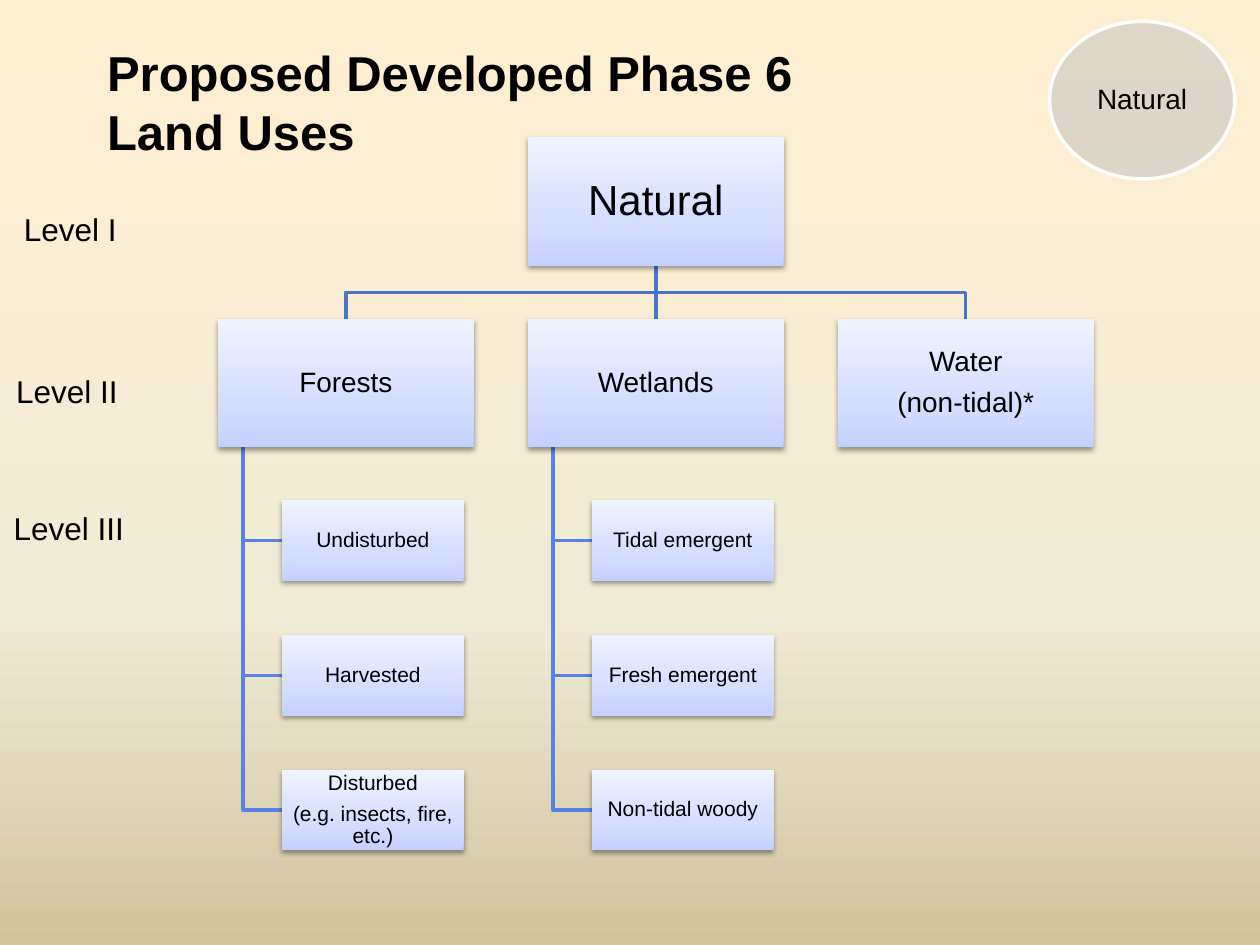
from lxml import etree
from pptx import Presentation
from pptx.dml.color import RGBColor
from pptx.enum.shapes import MSO_CONNECTOR as CONN, MSO_SHAPE as SHAPE
from pptx.enum.text import MSO_ANCHOR as ANCHOR, MSO_AUTO_SIZE as AUTO, PP_ALIGN as ALIGN
from pptx.oxml import parse_xml
from pptx.oxml.ns import nsdecls, qn
from pptx.util import Inches, Pt

BLACK = RGBColor(0x00, 0x00, 0x00)
WHITE = RGBColor(0xFF, 0xFF, 0xFF)
GREY = RGBColor(0xBF, 0xBF, 0xBF)
TRUNK_BLUE = RGBColor(0x4E, 0x73, 0xCB)
BRANCH_BLUE = RGBColor(0x58, 0x82, 0xE6)
SAND = [(0, RGBColor(0xFF, 0xEF, 0xD1)), (65, RGBColor(0xF0, 0xEB, 0xD5)),
        (100, RGBColor(0xD1, 0xC3, 0x9F))]
LAVENDER = [(0, RGBColor(0xC4, 0xD0, 0xFF)), (35, RGBColor(0xD6, 0xDE, 0xFF)),
            (100, RGBColor(0xEF, 0xF2, 0xFF))]

CARD_W, CARD_H = 2.03, 1.02
LEAF_W, LEAF_H = 1.44, 0.64
COLUMN_STEP, LEVEL_STEP, LEAF_STEP = 2.46, 1.44, 1.07
TRUNK_INDENT, LEAF_INDENT = 0.2, 0.51

BRANCHES = [
    ("Forests", ["Undisturbed", "Harvested", "Disturbed\n(e.g. insects, fire, etc.)"]),
    ("Wetlands", ["Tidal emergent", "Fresh emergent", "Non-tidal woody"]),
    ("Water\n(non-tidal)*", []),
]
LEVELS = [("Level I", 0.09, 1.62), ("Level II", 0.03, 2.9), ("Level III", 0.01, 3.99)]


def set_gradient(fill, stops, angle):
    """Fill with any number of (percent, colour) stops; angle is counter-clockwise."""
    fill.gradient()
    fill.gradient_angle = angle
    stop_list = fill.gradient_stops[0]._gs.getparent()
    for stop in list(stop_list):
        stop_list.remove(stop)
    for percent, colour in stops:
        stop_list.append(parse_xml(
            f'<a:gs {nsdecls("a")} pos="{percent * 1000}">'
            f'<a:srgbClr val="{colour}"/></a:gs>'))


def add_soft_shadow(sp):
    sp.shadow.inherit = False
    effects = sp._element.spPr.find(qn("a:effectLst"))
    effects.append(parse_xml(
        f'<a:outerShdw {nsdecls("a")} blurRad="39370" dist="20320" dir="5400000" rotWithShape="0">'
        '<a:srgbClr val="000000"><a:alpha val="38000"/></a:srgbClr></a:outerShdw>'))


def write(tf, text, size, bold=False, frame=None, para=None):
    tf.text = text
    tf.word_wrap = True
    for name, value in (frame or {}).items():
        setattr(tf, name, value)
    for p in tf.paragraphs:
        for name, value in (para or {}).items():
            setattr(p, name, value)
        for r in p.runs:
            for name, value in {"name": "Arial", "size": Pt(size), "bold": bold}.items():
                setattr(r.font, name, value)
            r.font.color.rgb = BLACK


def write_centred(sp, text, size):
    margins = ("margin_left", "margin_top", "margin_right", "margin_bottom")
    frame = {m: Inches(0.01) for m in margins} | {"vertical_anchor": ANCHOR.MIDDLE}
    write(sp.text_frame, text, size, frame=frame,
          para={"alignment": ALIGN.CENTER, "line_spacing": 0.9, "space_after": Pt(size * 0.4)})


def add_card(slide, text, size, x, y, w, h):
    sp = slide.shapes.add_shape(SHAPE.RECTANGLE, Inches(x), Inches(y), Inches(w), Inches(h))
    set_gradient(sp.fill, LAVENDER, 90)
    sp.line.fill.background()
    add_soft_shadow(sp)
    write_centred(sp, text, size)


def add_elbow(slide, points, colour):
    start, *rest = [(Inches(x), Inches(y)) for x, y in points]
    builder = slide.shapes.build_freeform(*start)
    builder.add_line_segments(rest, close=False)
    sp = builder.convert_to_shape()
    sp.fill.background()
    sp.line.color.rgb = colour
    sp.line.width = Pt(2)
    sp.shadow.inherit = False


def add_stem(slide, x, top, bottom):
    line = slide.shapes.add_connector(CONN.STRAIGHT, Inches(x), Inches(top),
                                      Inches(x), Inches(bottom))
    line.line.color.rgb = TRUNK_BLUE
    line.line.width = Pt(2)
    etree.SubElement(line._element.spPr, qn("a:effectLst"))


def add_branch(slide, text, leaves, x, y):
    first_leaf = y + LEVEL_STEP
    trunk, leaf_x = x + TRUNK_INDENT, x + LEAF_INDENT
    tops = [first_leaf + i * LEAF_STEP for i in range(len(leaves))]
    for top in tops:
        middle = top + LEAF_H / 2
        add_elbow(slide, [(trunk, y + CARD_H), (trunk, middle), (leaf_x, middle)], BRANCH_BLUE)
    add_card(slide, text, 16, x, y, CARD_W, CARD_H)
    for leaf, top in zip(leaves, tops):
        add_card(slide, leaf, 12, leaf_x, top, LEAF_W, LEAF_H)


def add_hierarchy(slide, x, y):
    root_x = x + COLUMN_STEP
    centre = root_x + CARD_W / 2
    root_bottom, child_top = y + CARD_H, y + LEVEL_STEP
    bend = (root_bottom + child_top) / 2
    for end in (centre - COLUMN_STEP, centre + COLUMN_STEP):
        add_elbow(slide, [(centre, root_bottom), (centre, bend), (end, bend), (end, child_top)],
                  TRUNK_BLUE)
    add_stem(slide, centre, root_bottom, child_top)
    add_card(slide, "Natural", 24, root_x, y, CARD_W, CARD_H)
    for i, (text, leaves) in enumerate(BRANCHES):
        add_branch(slide, text, leaves, x + i * COLUMN_STEP, child_top)


def add_title(slide, x, y, w, h):
    title = slide.shapes.title
    title.left, title.top, title.width, title.height = map(Inches, (x, y, w, h))
    write(title.text_frame, "Proposed Developed Phase 6 Land Uses", 28, bold=True,
          frame={"vertical_anchor": ANCHOR.TOP, "auto_size": AUTO.NONE},
          para={"alignment": ALIGN.LEFT})


def add_level_labels(slide, w, h):
    for text, x, y in LEVELS:
        box = slide.shapes.add_textbox(Inches(x), Inches(y), Inches(w), Inches(h))
        write(box.text_frame, text, 18)


def add_badge(slide, x, y, w, h):
    sp = slide.shapes.add_shape(SHAPE.OVAL, Inches(x), Inches(y), Inches(w), Inches(h))
    sp.fill.solid()
    sp.fill.fore_color.rgb = GREY
    colour = sp._element.spPr.find(qn("a:solidFill"))[0]
    etree.SubElement(colour, qn("a:alpha"), val="50000")
    sp.line.color.rgb = WHITE
    sp.line.width = Pt(2)
    sp.shadow.inherit = False
    write_centred(sp, "Natural", 16)


def main():
    prs = Presentation()
    prs.slide_width, prs.slide_height = Inches(10), Inches(7.5)
    slide = prs.slides.add_slide(prs.slide_layouts[5])
    set_gradient(slide.background.fill, SAND, 270)
    add_title(slide, 0.75, 0.29, 6.65, 0.57)
    add_hierarchy(slide, 1.73, 1.09)
    add_level_labels(slide, 1.32, 0.4)
    add_badge(slide, 8.33, 0.17, 1.47, 1.25)
    prs.save("out.pptx")


if __name__ == "__main__":
    main()
